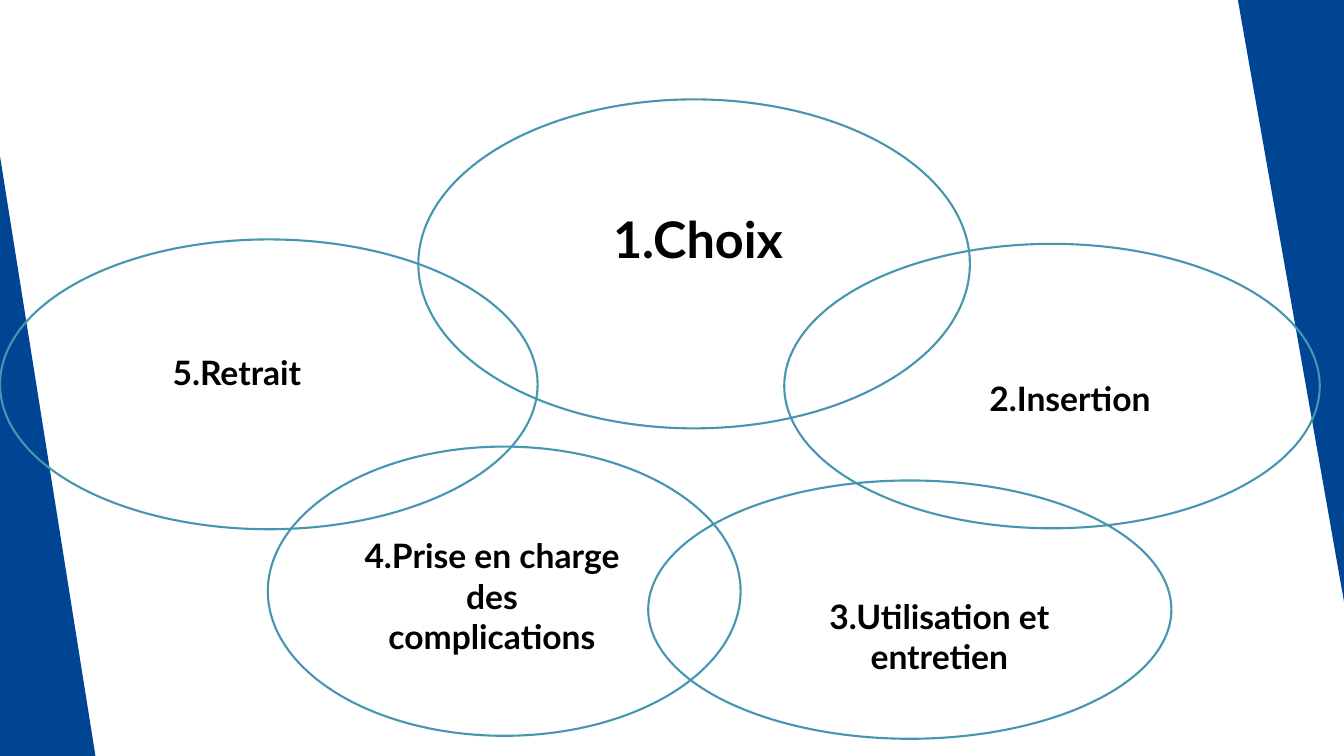
import pptx
import pptx.util
import pptx.dml.color
import pptx.enum.shapes
import pptx.enum.text

Pt = pptx.util.Pt
SHAPES = pptx.enum.shapes.MSO_SHAPE
COLOURS = {"corner": "004494", "ring": "4696B1", "text": "000000"}
FONT = "Lato"

CORNERS = [
    ((0, 111.6, 68.4, 429.8), 0),
    ((884.2, 0, 75.8, 429.8), 180),
]
RINGS = [
    (298.8, 71, 394, 235),
    (0, 171, 384, 207),
    (560.2, 174.2, 382.5, 203.2),
    (463, 343.2, 373.7, 184.5),
    (191.3, 319, 337.7, 206.6),
]
STEPS = [
    ((419.8, 145.4, 166.3, 51), "1.Choix ", 36),
    ((672.5, 266.4, 183.6, 36), "2.Insertion", 24),
    ((537.8, 421.9, 266.4, 36), "3.Utilisation et entretien", 24),
    ((218.2, 378.7, 272.2, 94.3), "4.Prise en charge \ndes \ncomplications ", 24),
    ((93.6, 247.7, 151.2, 36), "5.Retrait", 24),
]


def colour(name):
    """Return the named colour."""
    return pptx.dml.color.RGBColor.from_string(COLOURS[name])


def add_corner(page, box, rotation):
    """Draw a solid corner triangle in the box."""
    corner = page.shapes.add_shape(SHAPES.RIGHT_TRIANGLE, *map(Pt, box))
    corner.rotation = rotation
    corner.shadow.inherit = False
    corner.fill.solid()
    corner.fill.fore_color.rgb = colour("corner")
    corner.line.fill.background()


def add_ring(page, box):
    """Draw an outlined ellipse in the box."""
    ring = page.shapes.add_shape(SHAPES.OVAL, *map(Pt, box))
    ring.shadow.inherit = False
    ring.fill.background()
    ring.line.color.rgb = colour("ring")
    ring.line.width = Pt(1.5)


def add_step(page, box, text, size):
    """Write a bold centred step label in the box."""
    frame = page.shapes.add_textbox(*map(Pt, box)).text_frame
    frame.word_wrap = True
    frame.auto_size = pptx.enum.text.MSO_AUTO_SIZE.SHAPE_TO_FIT_TEXT
    frame.text = text
    for para in frame.paragraphs:
        para.alignment = pptx.enum.text.PP_ALIGN.CENTER
        for span in para.runs:
            span.font.name = FONT
            span.font.size = Pt(size)
            span.font.bold = True
            span.font.color.rgb = colour("text")


def main():
    """Build the slide and save it."""
    deck = pptx.Presentation()
    deck.slide_width, deck.slide_height = Pt(960), Pt(540)
    page = deck.slides.add_slide(deck.slide_layouts[6])
    for box, rotation in CORNERS:
        add_corner(page, box, rotation)
    for box in RINGS:
        add_ring(page, box)
    for box, text, size in STEPS:
        add_step(page, box, text, size)
    deck.save("out.pptx")


if __name__ == "__main__":
    main()
